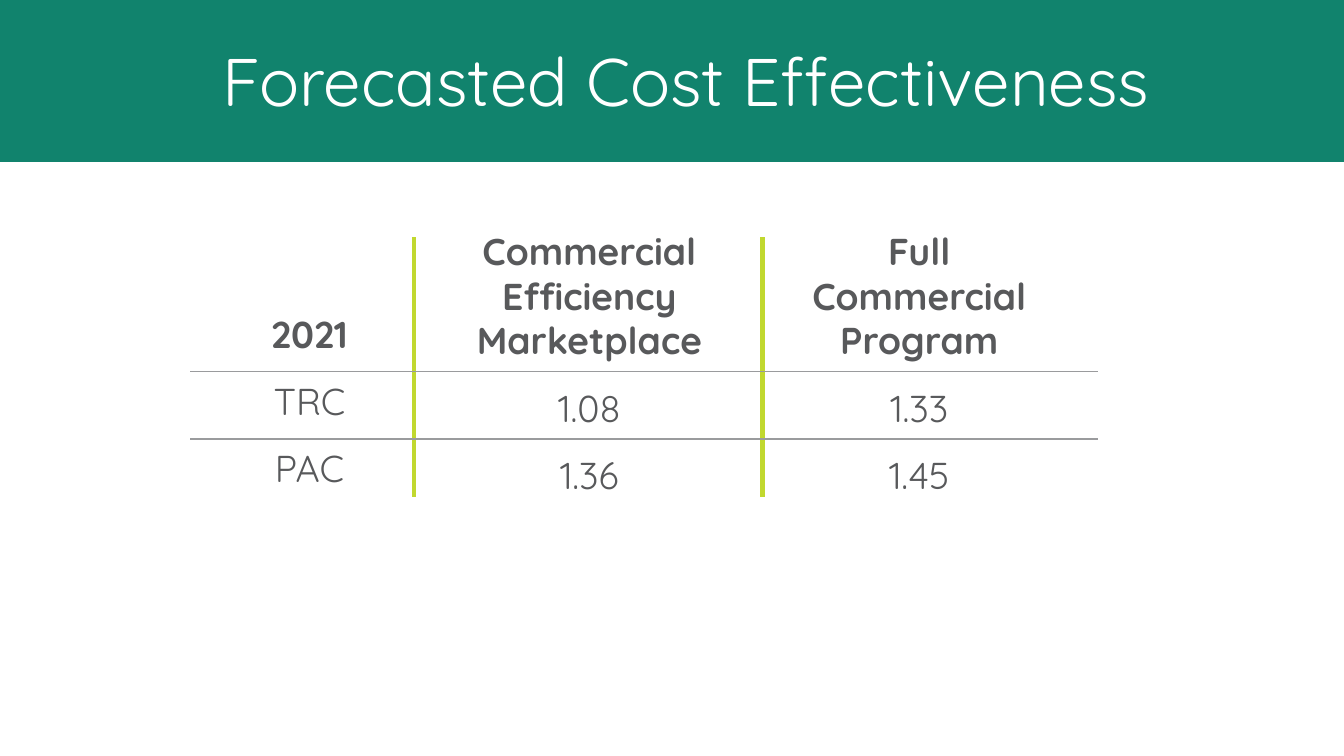
from dataclasses import dataclass

from pptx import Presentation
from pptx.dml.color import RGBColor as Rgb
from pptx.enum import shapes, text
from pptx.oxml.ns import qn
from pptx.util import Pt


@dataclass(frozen=True)
class Theme:
    """Colours, type sizes and font of the slide."""
    band: Rgb = Rgb(0x11, 0x83, 0x6D)
    white: Rgb = Rgb(0xFF, 0xFF, 0xFF)
    ink: Rgb = Rgb(0x58, 0x59, 0x5B)
    lime: Rgb = Rgb(0xC1, 0xD8, 0x2F)
    rule: Rgb = Rgb(0x9A, 0x9B, 0x9D)
    font: str = "Quicksand"
    head: int = 36
    body: int = 20


THEME = Theme()


def place(shape, left, top, width, height):
    """Move and size a shape in points."""
    shape.left, shape.top = Pt(left), Pt(top)
    shape.width, shape.height = Pt(width), Pt(height)


def style(para, size, color, bold=False, indent=0):
    """Centre a paragraph without a bullet and set its font."""
    props = para._p.get_or_add_pPr()
    props.set("marL", str(Pt(indent)))
    props.set("indent", "0")
    props.append(props.makeelement(qn("a:buNone"), {}))
    para.alignment = text.PP_ALIGN.CENTER
    para.space_before = Pt(0)
    font = para.font
    font.name, font.size, font.bold = THEME.font, Pt(size), bold
    font.color.rgb = color


def add_title(slide, words):
    """Fill the title band and write the heading in it."""
    title = slide.shapes.title
    place(title, 0, -1.5, 721, 88.2)
    title.fill.solid()
    title.fill.fore_color.rgb = THEME.band
    frame = title.text_frame
    frame.text = words
    frame.auto_size = text.MSO_AUTO_SIZE.NONE
    frame.vertical_anchor = text.MSO_ANCHOR.MIDDLE
    style(frame.paragraphs[0], THEME.head, THEME.white, indent=14)


def fill_column(shape, box, lines):
    """Write a bold heading and its values into a column."""
    place(shape, *box)
    frame = shape.text_frame
    frame.word_wrap = True
    frame.auto_size = text.MSO_AUTO_SIZE.NONE
    frame.vertical_anchor = text.MSO_ANCHOR.TOP
    frame.text = "\n".join(lines)
    for row, para in enumerate(frame.paragraphs):
        style(para, THEME.body, THEME.ink, bold=row == 0)
        para.space_after = Pt(12)


def add_line(slide, start, end, color, width):
    """Draw a straight line between two points."""
    line = slide.shapes.add_connector(
        shapes.MSO_CONNECTOR.STRAIGHT, *map(Pt, start + end))
    line.line.color.rgb = color
    line.line.width = Pt(width)
    props = line._element.spPr
    props.append(props.makeelement(qn("a:effectLst"), {}))


def main():
    """Build the slide and save it."""
    deck = Presentation()
    deck.slide_width, deck.slide_height = Pt(720), Pt(405)
    slide = deck.slides.add_slide(deck.slide_layouts[1])
    add_title(slide, "Forecasted Cost Effectiveness")
    fill_column(slide.placeholders[1], (109.5, 163, 112.5, 206),
                ("2021", "TRC", "PAC"))
    columns = (
        ((223.5, 118.6, 184.5, 225),
         ("Commercial Efficiency Marketplace", "1.08", "1.36")),
        ((410.5, 118.6, 164, 219),
         ("Full Commercial Program", "1.33", "1.45")),
    )
    for box, lines in columns:
        fill_column(slide.shapes.add_textbox(0, 0, 0, 0), box, lines)
    for x in (222, 408.5):
        add_line(slide, (x, 127), (x, 266.5), THEME.lime, 2.25)
    for y in (199, 235):
        add_line(slide, (588, y), (102, y), THEME.rule, 1)
    deck.save("out.pptx")


if __name__ == "__main__":
    main()
